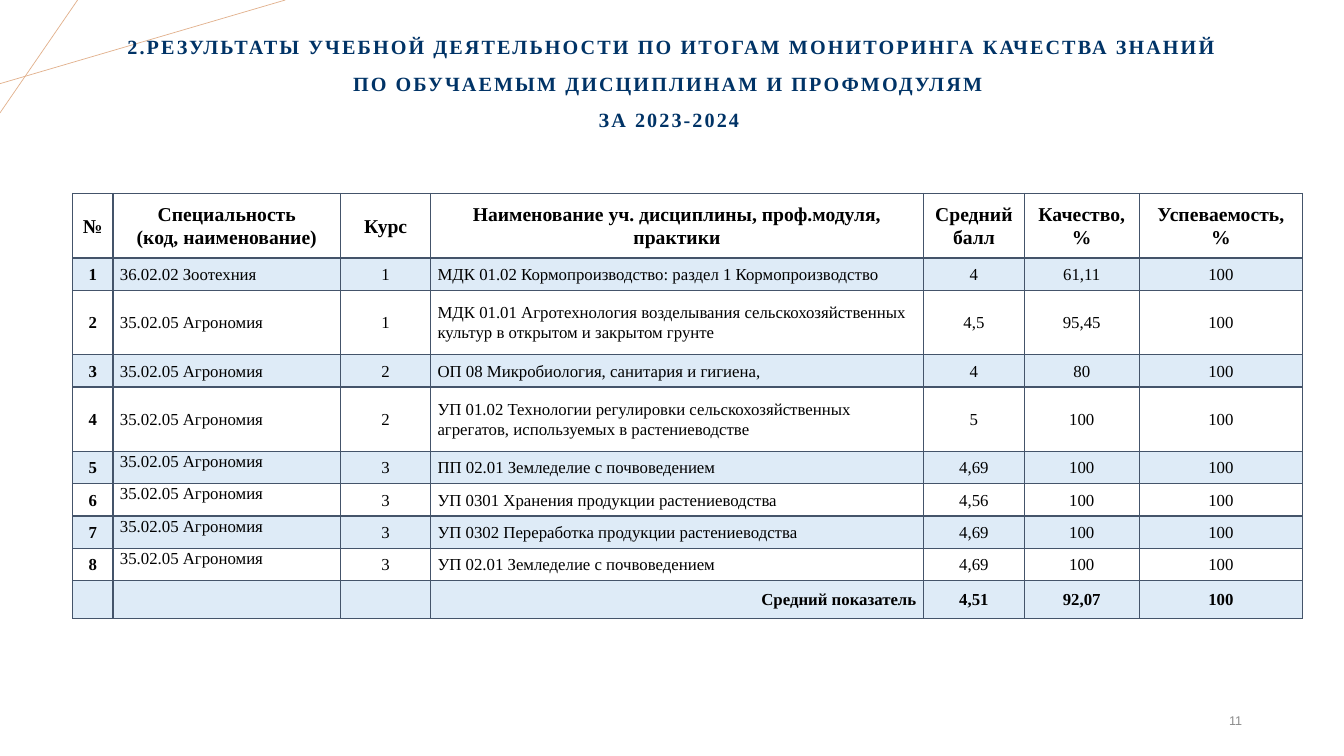
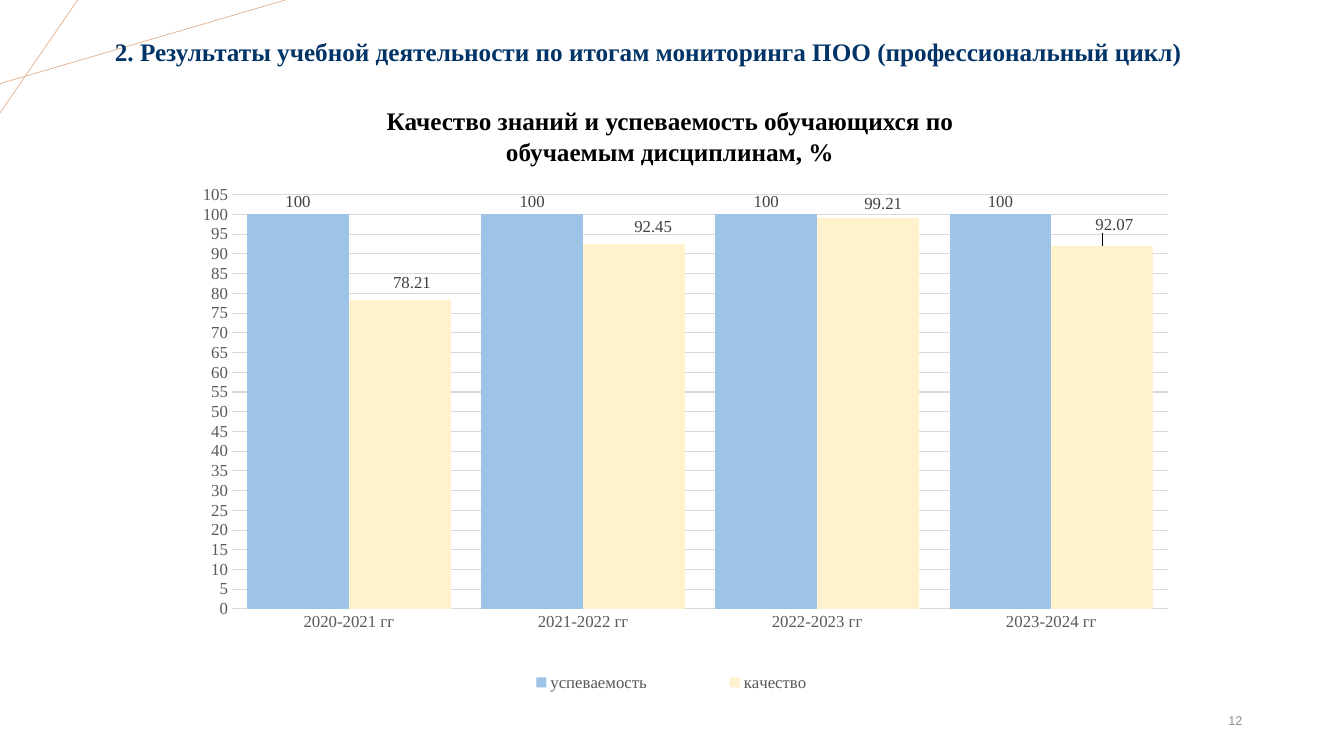
import lxml.etree
import pptx
import pptx.chart.data
import pptx.dml.color
import pptx.enum.chart
import pptx.enum.shapes
import pptx.enum.text
import pptx.oxml
import pptx.oxml.ns
import pptx.util

Inches, Pt = pptx.util.Inches, pptx.util.Pt
qn = pptx.oxml.ns.qn
Align, Anchor = pptx.enum.text.PP_ALIGN, pptx.enum.text.MSO_ANCHOR

# Shared style
SERIF, SANS = "Times New Roman", "Arial"
NAVY, BLACK, GREY, COPPER = "003366", "000000", "8C8C8C", "E2B18D"
BORDER, BAND = "44546A", "DEEBF7"
AXIS_TEXT, LABEL_TEXT, GRID = "595959", "404040", "D9D9D9"
CORNER_LINES = [(0, 0.83, 2.83, 0), (0.77, 0, 0, 1.12)]
NUMBER_BOX = (9.42, 6.95, 3, 0.4)

# Slide with the results table
RESULTS_TITLE = (
    "2.РЕЗУЛЬТАТЫ УЧЕБНОЙ ДЕЯТЕЛЬНОСТИ ПО ИТОГАМ МОНИТОРИНГА КАЧЕСТВА ЗНАНИЙ\v"
    "ПО ОБУЧАЕМЫМ ДИСЦИПЛИНАМ И ПРОФМОДУЛЯМ \vЗА 2023-2024 "
)
HEADER = ["№", "Специальность\n(код, наименование)", "Курс",
          "Наименование уч. дисциплины, проф.модуля, практики",
          "Средний балл", "Качество, %", "Успеваемость, %"]
AGRONOMY = "35.02.05 Агрономия"
RESULTS = [
    ("36.02.02 Зоотехния", "1",
     "МДК 01.02 Кормопроизводство: раздел 1 Кормопроизводство", "4", "61,11"),
    (AGRONOMY, "1", "МДК 01.01 Агротехнология возделывания сельскохозяйственных "
     "культур в открытом и закрытом грунте", "4,5", "95,45"),
    (AGRONOMY, "2", "ОП 08 Микробиология, санитария и гигиена,", "4", "80"),
    (AGRONOMY, "2", "УП 01.02 Технологии регулировки сельскохозяйственных "
     "агрегатов, используемых в растениеводстве", "5", "100"),
    (AGRONOMY, "3", "ПП 02.01 Земледелие с почвоведением", "4,69", "100"),
    (AGRONOMY, "3", "УП 0301 Хранения продукции растениеводства", "4,56", "100"),
    (AGRONOMY, "3", "УП 0302 Переработка продукции растениеводства", "4,69", "100"),
    (AGRONOMY, "3", "УП 02.01 Земледелие с почвоведением", "4,69", "100"),
]
PASS_RATE = "100"
TOTAL = ["", "", "", "Средний показатель", "4,51", "92,07", PASS_RATE]
COLUMN_WIDTHS = [0.4, 2.26, 0.89, 4.89, 1, 1.14, 1.62]
ROW_HEIGHTS = [0.64, 0.32, 0.64, 0.32, 0.64, 0.32, 0.32, 0.32, 0.32, 0.38]
SPECIALTY, SUBJECT = 1, 3
FIRST_TOP_ROW = 5

# Slide with the chart
CHART_SLIDE_TITLE = ("2. Результаты учебной деятельности по итогам мониторинга "
                     "ПОО (профессиональный цикл)")
CHART_HEADING = "Качество знаний и успеваемость обучающихся по обучаемым дисциплинам, %"
YEARS = ["2020-2021 гг", "2021-2022 гг", "2022-2023 гг", "2023-2024 гг"]
SERIES = [("успеваемость", [100, 100, 100, 100], "9DC3E6"),
          ("качество", [78.21, 92.45, 99.21, 92.07], "FFF2CC")]
QUALITY_LABEL_SHIFTS = [(0.012, -0.01), (0.019, -0.01), (0.015, -0.002), (0.012, -0.016)]


def color(value):
    return pptx.dml.color.RGBColor.from_string(value)


def box(values):
    return [Inches(value) for value in values]


def set_font(font, size, fill, bold=False, name=SERIF):
    font.name, font.size, font.bold = name, Pt(size), bold
    font.color.rgb = color(fill)


def write(shape, text, size, fill, align, anchor, bold=False, name=SERIF):
    frame = shape.text_frame
    frame.text = text
    frame.word_wrap = True
    frame.auto_size = pptx.enum.text.MSO_AUTO_SIZE.NONE
    frame.vertical_anchor = anchor
    for paragraph in frame.paragraphs:
        paragraph.alignment = align
        for run in paragraph.runs:
            set_font(run.font, size, fill, bold, name)
    return frame.paragraphs[0]


def add_corner_lines(presentation, slide):
    """Draw the lines, then move them to the master."""
    for line_ends in CORNER_LINES:
        line = slide.shapes.add_connector(
            pptx.enum.shapes.MSO_CONNECTOR.STRAIGHT, *box(line_ends))
        line.line.color.rgb = color(COPPER)
        line.line.width = Pt(0.5)
        lxml.etree.SubElement(line._element.spPr, qn("a:effectLst"))
        presentation.slide_master.shapes._spTree.append(line._element)


def add_slide(presentation, number, title, title_box, size, anchor):
    slide = presentation.slides.add_slide(presentation.slide_layouts[5])
    shape = slide.shapes.title
    shape.left, shape.top, shape.width, shape.height = box(title_box)
    paragraph = write(shape, title, size, NAVY, Align.CENTER, anchor, True)
    number_shape = slide.shapes.add_textbox(*box(NUMBER_BOX))
    write(number_shape, str(number), 9, GREY, Align.RIGHT, Anchor.MIDDLE, name=SANS)
    return slide, paragraph


def format_cell(cell, row, column, last_row):
    header, total = row == 0, row == last_row
    top = column == SPECIALTY and FIRST_TOP_ROW <= row < last_row
    cell.vertical_anchor = Anchor.TOP if top else Anchor.MIDDLE
    cell.margin_left = cell.margin_right = Inches(0.07)
    cell.margin_top = cell.margin_bottom = 0
    if total and column == SUBJECT:
        align = Align.RIGHT
    elif column in (SPECIALTY, SUBJECT) and not header:
        align = Align.LEFT
    else:
        align = Align.CENTER
    for paragraph in cell.text_frame.paragraphs:
        paragraph.alignment = align
        paragraph.line_spacing = 1.07
        for run in paragraph.runs:
            set_font(run.font, 14 if header else 12, BLACK, header or total or column == 0)
    # Borders come before the fill
    properties = cell._tc.get_or_add_tcPr()
    for side in ("a:lnL", "a:lnR", "a:lnT", "a:lnB"):
        border = lxml.etree.SubElement(properties, qn(side), w=str(Pt(1)))
        solid = lxml.etree.SubElement(border, qn("a:solidFill"))
        lxml.etree.SubElement(solid, qn("a:srgbClr"), val=BORDER)
    if row % 2:
        cell.fill.solid()
        cell.fill.fore_color.rgb = color(BAND)
    else:
        cell.fill.background()


def add_results_table(slide):
    rows = [HEADER]
    rows += [[str(number), *result, PASS_RATE] for number, result in enumerate(RESULTS, 1)]
    rows.append(TOTAL)
    table = slide.shapes.add_table(
        len(rows), len(HEADER), Inches(0.72), Inches(1.92),
        Inches(sum(COLUMN_WIDTHS)), Inches(sum(ROW_HEIGHTS))).table
    table.first_row = table.horz_banding = False
    for column, width in zip(table.columns, COLUMN_WIDTHS):
        column.width = Inches(width)
    for row, height in zip(table.rows, ROW_HEIGHTS):
        row.height = Inches(height)
    for row, texts in enumerate(rows):
        for column, text in enumerate(texts):
            cell = table.cell(row, column)
            cell.text = text
            format_cell(cell, row, column, len(rows) - 1)


def manual_layout(**settings):
    layout = pptx.oxml.parse_xml(
        '<c:layout xmlns:c="http://schemas.openxmlformats.org/drawingml/2006/chart">'
        "<c:manualLayout/></c:layout>")
    for name, value in settings.items():
        lxml.etree.SubElement(layout[0], qn("c:" + name), val=str(value))
    return layout


def format_labels(series, shifts):
    outside = pptx.enum.chart.XL_LABEL_POSITION.OUTSIDE_END
    labels = series.data_labels
    labels.show_value = True
    labels.position = outside
    set_font(labels.font, 12, LABEL_TEXT)
    for index, (x, y) in enumerate(shifts):
        label = series.points[index].data_label
        set_font(label.font, 12, LABEL_TEXT)
        label.position = outside
        element = labels._element.findall(qn("c:dLbl"))[index]
        element.find(qn("c:idx")).addnext(manual_layout(x=x, y=y))


def add_results_chart(slide):
    data = pptx.chart.data.CategoryChartData()
    data.categories = YEARS
    for name, values, _ in SERIES:
        data.add_series(name, values)
    chart = slide.shapes.add_chart(
        pptx.enum.chart.XL_CHART_TYPE.COLUMN_CLUSTERED,
        *box((1.65, 1.82, 10.02, 5.13)), data).chart
    chart.has_title = False
    set_font(chart.font, 10, BLACK)

    # Axes
    for axis in (chart.category_axis, chart.value_axis):
        axis.major_tick_mark = axis.minor_tick_mark = pptx.enum.chart.XL_TICK_MARK.NONE
        axis.format.line.fill.background()
        set_font(axis.tick_labels.font, 12, AXIS_TEXT)
    value_axis = chart.value_axis
    value_axis.minimum_scale, value_axis.maximum_scale = 0, 105
    value_axis.major_unit = 5
    value_axis.has_major_gridlines = True
    grid_line = value_axis.major_gridlines.format.line
    grid_line.color.rgb = color(GRID)
    grid_line.width = Pt(0.75)

    # Columns and their labels
    plot = chart.plots[0]
    plot.gap_width, plot.overlap = 30, 0
    plot.vary_by_categories = False
    for series, (_, _, fill), shifts in zip(plot.series, SERIES, ([], QUALITY_LABEL_SHIFTS)):
        series.format.fill.solid()
        series.format.fill.fore_color.rgb = color(fill)
        format_labels(series, shifts)

    # Legend and plot area
    chart.has_legend = True
    legend = chart.legend
    legend.position = pptx.enum.chart.XL_LEGEND_POSITION.BOTTOM
    legend.include_in_layout = False
    set_font(legend.font, 12, AXIS_TEXT)
    for old in legend._element.findall(qn("c:layout")):
        legend._element.remove(old)
    legend._element.find(qn("c:legendPos")).addnext(
        manual_layout(xMode="edge", yMode="edge", x=0.29, y=0.93, w=0.42, h=0.07))
    plot_area = chart._chartSpace.chart.plotArea
    for old in plot_area.findall(qn("c:layout")):
        plot_area.remove(old)
    plot_area.insert(0, manual_layout(layoutTarget="inner", xMode="edge", yMode="edge",
                                      x=0.065, y=0.022, w=0.927, h=0.801))


def main():
    presentation = pptx.Presentation()
    presentation.slide_width, presentation.slide_height = Inches(13.33), Inches(7.5)

    slide, paragraph = add_slide(presentation, 11, RESULTS_TITLE,
                                 (0.92, 0.44, 11.5, 0.65), 14.4, Anchor.MIDDLE)
    paragraph.line_spacing = 1.5
    for run in paragraph.runs:
        run._r.get_or_add_rPr().set("spc", "150")
    add_corner_lines(presentation, slide)
    add_results_table(slide)

    slide, _ = add_slide(presentation, 12, CHART_SLIDE_TITLE,
                         (0.89, 0.31, 11.08, 0.4), 18, Anchor.TOP)
    add_results_chart(slide)
    heading = slide.shapes.add_textbox(*box((3.31, 1, 6.67, 0.71)))
    write(heading, CHART_HEADING, 18, BLACK, Align.CENTER, Anchor.TOP, True)

    presentation.save("out.pptx")


if __name__ == "__main__":
    main()
